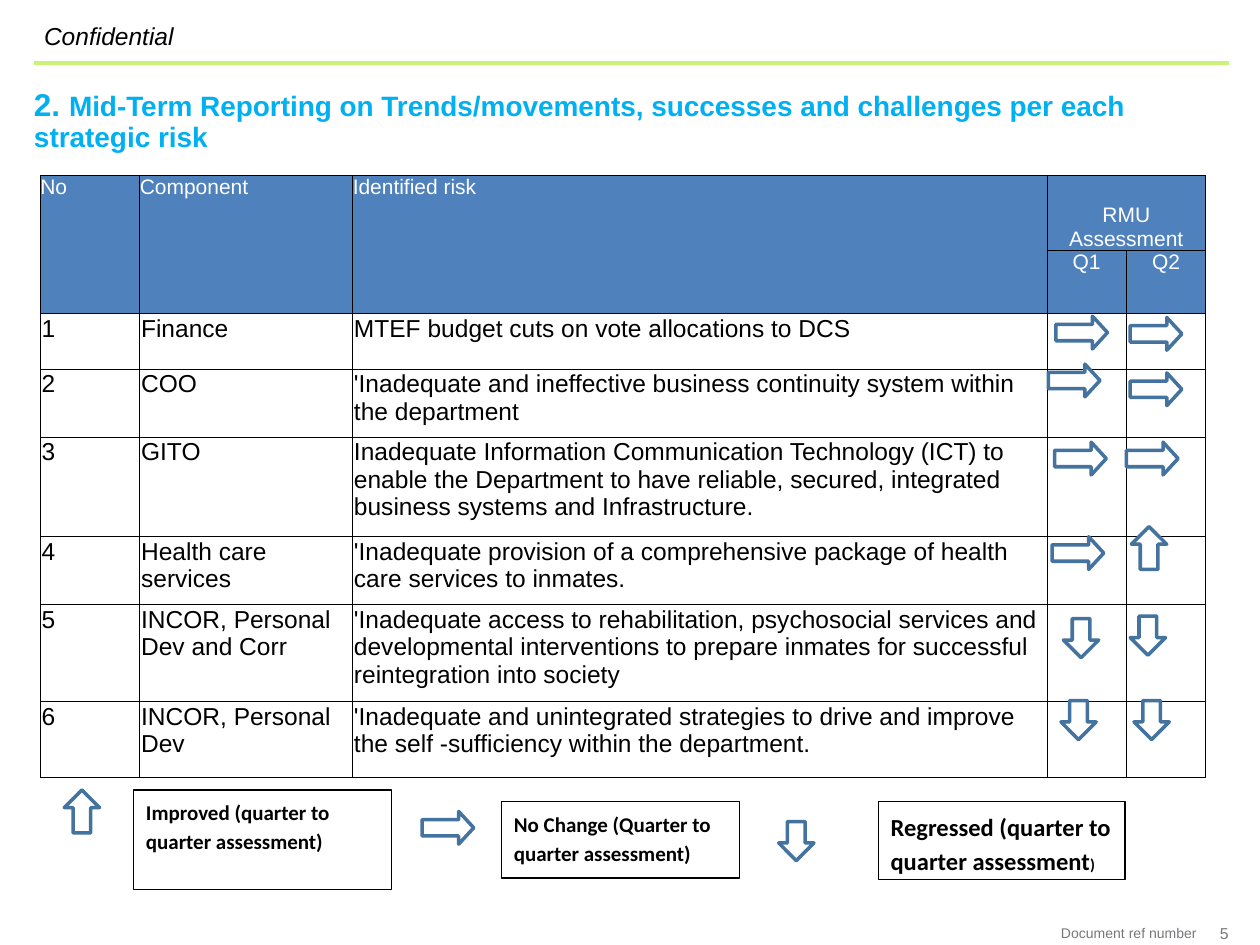
from itertools import accumulate

from lxml import etree
from pptx import Presentation, util as u
from pptx.dml.color import RGBColor
from pptx.enum import shapes, text
from pptx.oxml import ns

COLUMNS, ROWS = 100, 75
UNIT = u.Inches(10) / COLUMNS
BLACK, WHITE, GREY = "000000", "FFFFFF", "77787B"
BLUE, CYAN, GREEN, STEEL = "4F81BD", "00B0F0", "CAF278", "43739E"
LEFT, CENTER, RIGHT = text.PP_ALIGN.LEFT, text.PP_ALIGN.CENTER, text.PP_ALIGN.RIGHT
TOP, MIDDLE, BOTTOM = (text.MSO_ANCHOR.TOP, text.MSO_ANCHOR.MIDDLE,
                       text.MSO_ANCHOR.BOTTOM)

ARROWS = {
    "same": (shapes.MSO_SHAPE.RIGHT_ARROW, 4.1, 2.6, (0.5, 0.46)),
    "up": (shapes.MSO_SHAPE.UP_ARROW, 2.8, 3.4, (0.5, 0.5)),
    "down": (shapes.MSO_SHAPE.DOWN_ARROW, 2.8, 3.1, (0.5, 0.5)),
}
TABLE_COLUMNS = [7.9, 16.9, 55.1, 6.3, 6.3]
TABLE_ROWS = [6, 5, 4.4, 5.4, 7.9, 5.4, 7.7, 6]
RISKS = [
    ("Finance", "MTEF budget cuts on vote allocations to DCS",
     ("same", 0.7, 0.2), ("same", 0.3, 0.3)),
    ("COO", "'Inadequate and ineffective business continuity system within "
     "the department", ("same", 0.1, -0.4), ("same", 0.3, 0.3)),
    ("GITO", "Inadequate Information Communication Technology (ICT) to enable "
     "the Department to have reliable, secured, integrated business systems "
     "and Infrastructure.", ("same", 0.6, 0.4), ("same", 0, 0.4)),
    ("Health care services", "'Inadequate provision of a comprehensive package "
     "of health care services to inmates.", ("same", 0.4, 0), ("up", 0.4, -0.8)),
    ("INCOR, Personal Dev and Corr", "'Inadequate access to rehabilitation, "
     "psychosocial services and developmental interventions to prepare inmates "
     "for successful reintegration into society",
     ("down", 1.3, 1.1), ("down", 0.3, 0.9)),
    ("INCOR, Personal Dev", "'Inadequate and unintegrated strategies to drive "
     "and improve the self -sufficiency within the department.",
     ("down", 1.1, -0.1), ("down", 0.6, -0.1)),
]
LEGEND = [
    ("up", 0, 0, (5.5, 0, 20.5, 7.9),
     [("Improved (quarter to quarter assessment)", 12)]),
    ("same", 28.4, 1.7, (34.7, 0.9, 18.9, 6.1),
     [("No Change (Quarter to quarter assessment)", 12)]),
    ("down", 56.7, 2.5, (64.6, 0.9, 19.6, 6.2),
     [("Regressed (quarter to quarter assessment", 14), (")", 9)]),
]


def color(value):
    """Turn a hex string into a colour."""
    return RGBColor.from_string(value)


def grid(*cells):
    """Turn grid units into lengths."""
    return [u.Emu(round(cell * UNIT)) for cell in cells]


def write(frame, spans, hue=BLACK, font="Arial", bold=False, italic=False,
          align=LEFT, spacing=None, after=None):
    """Fill a text frame with one paragraph of (words, size) spans."""
    para = frame.paragraphs[0]
    para.alignment, para.line_spacing = align, spacing
    if after is not None:
        para.space_after = u.Pt(after)
    for words, size in spans:
        span = para.add_run()
        span.text = words
        span.font.size, span.font.name = u.Pt(size), font
        span.font.bold, span.font.italic = bold, italic
        span.font.color.rgb = color(hue)


def add_label(page, box, spans, inset=0, anchor=TOP, wrap=True, **style):
    """Add a text box."""
    frame = page.shapes.add_textbox(*grid(*box)).text_frame
    frame.word_wrap, frame.vertical_anchor = wrap, anchor
    frame.margin_left = frame.margin_right = u.Inches(inset)
    frame.margin_top = frame.margin_bottom = u.Inches(inset)
    write(frame, spans, **style)


def add_outline(page, kind, box, line, weight):
    """Add a white shape with a coloured outline."""
    shape = page.shapes.add_shape(kind, *grid(*box))
    shape.shadow.inherit = False
    shape.fill.solid()
    shape.fill.fore_color.rgb = color(WHITE)
    shape.line.color.rgb = color(line)
    shape.line.width = u.Pt(weight)
    return shape


def add_arrow(page, trend, left, top):
    """Add the arrow of a trend."""
    kind, width, height, adjustments = ARROWS[trend]
    arrow = add_outline(page, kind, (left, top, width, height), STEEL, 2)
    for index, value in enumerate(adjustments):
        arrow.adjustments[index] = value


def add_header(page, box):
    """Place the confidentiality mark above its rule."""
    left, top, width, height = box
    rule = page.shapes.add_connector(
        shapes.MSO_CONNECTOR.STRAIGHT,
        *grid(left, top + height, left + width, top + height))
    rule.line.color.rgb, rule.line.width = color(GREEN), u.Pt(2.25)
    etree.SubElement(rule.element.spPr, ns.qn("a:effectLst"))
    add_label(page, (left, top, 18.4, 3.9), [("Confidential", 14)],
              inset=0.08, italic=True)


def add_footer(page, box):
    """Place the document reference and page number."""
    left, top, width, height = box
    style = dict(anchor=MIDDLE, align=RIGHT, hue=GREY)
    add_label(page, (left, top, 10.9, height), [("Document ref number", 8)],
              wrap=False, **style)
    add_label(page, (left + width - 2.9, top, 2.9, height), [("5", 9)], **style)


def set_borders(cell):
    """Draw thin black lines on all sides of a cell."""
    for side in ("a:lnL", "a:lnR", "a:lnT", "a:lnB"):
        line = etree.SubElement(cell._tc.get_or_add_tcPr(), ns.qn(side),
                                w=str(u.Pt(0.5)))
        fill = etree.SubElement(line, ns.qn("a:solidFill"))
        etree.SubElement(fill, ns.qn("a:srgbClr"), val=BLACK)


def fill_cell(cell, words, size, inset=0, anchor=TOP, **style):
    """Write into a table cell."""
    cell.margin_left = cell.margin_right = cell.margin_top = u.Inches(inset)
    cell.margin_bottom, cell.vertical_anchor = 0, anchor
    write(cell.text_frame, [(words, size)], **style)


def add_risk_table(page, box):
    """Place the risk table and its trend arrows."""
    left, top = box[:2]
    table = page.shapes.add_table(
        len(TABLE_ROWS), len(TABLE_COLUMNS), *grid(*box)).table
    table.first_row = table.horz_banding = False
    for column, width in zip(table.columns, grid(*TABLE_COLUMNS)):
        column.width = width
    for row, height in zip(table.rows, grid(*TABLE_ROWS)):
        row.height = height
    for index, row in enumerate(table.rows):
        for cell in row.cells:
            set_borders(cell)
            cell.fill.solid()
            cell.fill.fore_color.rgb = color(BLUE if index < 2 else WHITE)

    for column, words in enumerate(("No", "Component", "Identified risk")):
        table.cell(0, column).merge(table.cell(1, column))
        fill_cell(table.cell(0, column), words, 12, hue=WHITE)
    table.cell(0, 3).merge(table.cell(0, 4))
    fill_cell(table.cell(0, 3), "RMU Assessment", 12, anchor=BOTTOM,
              hue=WHITE, align=CENTER)
    for column, words in enumerate(("Q1", "Q2"), 3):
        fill_cell(table.cell(1, column), words, 12, hue=WHITE, align=CENTER)

    lefts = list(accumulate(TABLE_COLUMNS, initial=left))
    tops = list(accumulate(TABLE_ROWS, initial=top))
    for number, (component, risk, *trends) in enumerate(RISKS, 1):
        row = number + 1
        for column, words in enumerate((str(number), component, risk)):
            fill_cell(table.cell(row, column), words, 14, inset=0.01)
        for column, (trend, across, down) in enumerate(trends, 3):
            add_arrow(page, trend, lefts[column] + across, tops[row] + down)


def add_legend(page, box):
    """Place the key to the arrows."""
    left, top = box[:2]
    for trend, across, down, (x, y, width, height), spans in LEGEND:
        add_arrow(page, trend, left + across, top + down)
        card = add_outline(page, shapes.MSO_SHAPE.RECTANGLE,
                           (left + x, top + y, width, height), BLACK, 0.75)
        card.text_frame.word_wrap = True
        card.text_frame.vertical_anchor = TOP
        write(card.text_frame, spans, font="Calibri", bold=True,
              spacing=1.15, after=10)


def main():
    """Build the slide."""
    deck = Presentation()
    deck.slide_width, deck.slide_height = grid(COLUMNS, ROWS)
    page = deck.slides.add_slide(deck.slide_layouts[6])
    add_header(page, (2.7, 0.9, 94.8, 4.1))
    add_footer(page, (84.1, 73.3, 13.4, 1.5))
    add_label(page, (2.7, 7.1, 94.6, 5.1), [
        ("2. ", 18),
        ("Mid-Term Reporting on Trends/movements, successes and challenges "
         "per each strategic risk", 16)], hue=CYAN, bold=True, spacing=0.9)
    add_risk_table(page, (3.2, 13.9, sum(TABLE_COLUMNS), sum(TABLE_ROWS)))
    add_legend(page, (5.1, 62.7, 84.2, 7.9))
    deck.save("out.pptx")


if __name__ == "__main__":
    main()
